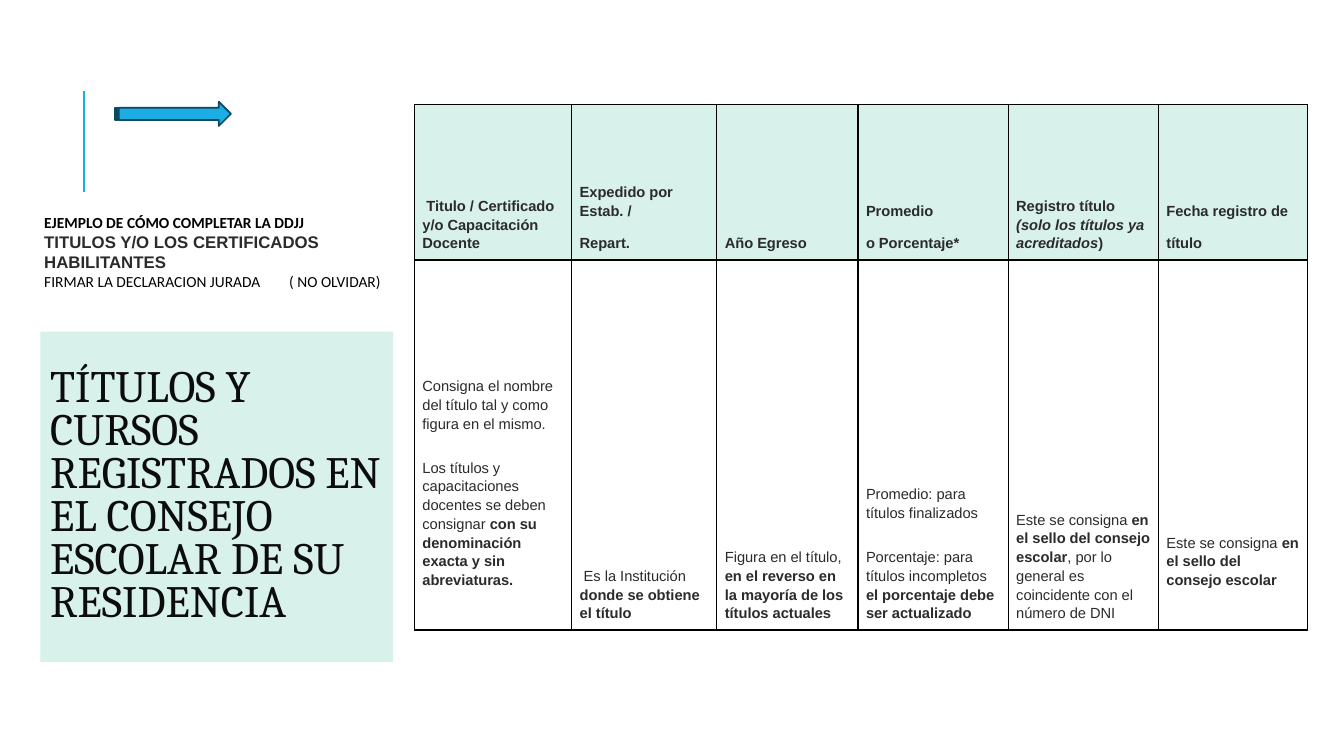
from dataclasses import dataclass
from typing import NamedTuple

from lxml import etree
from pptx import Presentation, util as u
from pptx.dml.color import RGBColor
from pptx.enum import shapes, text
from pptx.oxml import ns

MINT = "D8F1EA"
BLUE = "1CADE4"
NAVY = "0B4960"
BLACK = "000000"
GRAY = "2B2B2B"
INK = "0C0C0C"


class Run(NamedTuple):
    text: str
    bold: bool = False
    italic: bool = False


@dataclass
class Line:
    runs: list[Run]
    before: float = 10
    size: float = 10.5
    font: str = "Arial"
    color: str = GRAY


@dataclass
class Column:
    width: float
    header: list[Line]
    body: list[Line]
    bottom: float = 0.08


def plain(words: str, **style) -> Line:
    return Line([Run(words)], **style)


def bold(words: str, **style) -> Line:
    return Line([Run(words, True)], **style)


COLUMNS = [
    Column(1.56, [bold(" Titulo / Certificado y/o Capacitación Docente")],
           [plain("Consigna el nombre del título tal y como  figura en el mismo."),
            Line([Run("Los títulos y capacitaciones docentes se deben consignar "),
                  Run("con su denominación exacta y sin abreviaturas.", True)], before=18)],
           bottom=0.41),
    Column(1.44, [bold("Expedido por Estab. /"), bold("Repart.")],
           [Line([Run(" Es la Institución "), Run("donde se obtiene el título", True)])]),
    Column(1.4, [bold("Año Egreso")],
           [Line([Run("Figura en el título,"),
                  Run(" en el reverso en la mayoría de los títulos actuales", True)])]),
    Column(1.49, [bold("Promedio"), bold("o Porcentaje*")],
           [plain("Promedio: para títulos finalizados"),
            Line([Run("Porcentaje: para títulos incompletos "),
                  Run("el porcentaje debe ser actualizado", True)], before=18)]),
    Column(1.49, [Line([Run("Registro título ", True),
                        Run("(solo los títulos ya acreditados", True, True),
                        Run(")", True)])],
           [Line([Run("Este se consigna "),
                  Run("en el sello del consejo escolar", True),
                  Run(", por lo general es coincidente con el número de DNI")])]),
    Column(1.48, [bold("Fecha registro de"), bold("título")],
           [Line([Run("Este se consigna "), Run("en el sello del consejo escolar", True)])],
           bottom=0.41),
]
ROW_HEIGHTS = [1.54, 3.67]

CAPTION = [
    bold("EJEMPLO DE CÓMO COMPLETAR LA DDJJ", before=0, size=11, font="Calibri", color=BLACK),
    bold("TITULOS Y/O LOS CERTIFICADOS HABILITANTES", before=0, size=12),
    plain("FIRMAR LA DECLARACION JURADA\t( NO OLVIDAR)",
          before=0, size=11, font="Calibri", color=BLACK),
]
TITLE = "TÍTULOS Y CURSOS REGISTRADOS EN EL CONSEJO ESCOLAR DE SU RESIDENCIA"


def rgb(color: str) -> RGBColor:
    return RGBColor.from_string(color)


def inches(*lengths: float) -> list[u.Length]:
    return [u.Inches(length) for length in lengths]


def write_text(frame, lines: list[Line], *, spacing: float = 1.0) -> None:
    frame.word_wrap = True
    for index, line in enumerate(lines):
        paragraph = frame.add_paragraph() if index else frame.paragraphs[0]
        paragraph.alignment = text.PP_ALIGN.LEFT
        paragraph.line_spacing = spacing
        paragraph.space_before = u.Pt(line.before if index else 0)
        for part in line.runs:
            run = paragraph.add_run()
            run.text = part.text
            run.font.name = line.font
            run.font.size = u.Pt(line.size)
            run.font.bold = part.bold
            run.font.italic = part.italic
            run.font.color.rgb = rgb(line.color)


def add_tab_stop(paragraph, position: float) -> None:
    properties = paragraph._p.get_or_add_pPr()
    tabs = etree.SubElement(properties, ns.qn("a:tabLst"))
    etree.SubElement(tabs, ns.qn("a:tab"), pos=str(u.Inches(position)), algn="l")


def add_borders(cell, color: str, width: float) -> None:
    properties = cell._tc.get_or_add_tcPr()
    for side in ("a:lnL", "a:lnR", "a:lnT", "a:lnB"):
        border = etree.SubElement(properties, ns.qn(side), w=str(u.Pt(width)))
        fill = etree.SubElement(border, ns.qn("a:solidFill"))
        etree.SubElement(fill, ns.qn("a:srgbClr"), val=color)


def add_filled_shape(slide, kind, box: tuple, fill: str, line: str | None = None):
    shape = slide.shapes.add_shape(kind, *inches(*box))
    shape.shadow.inherit = False
    shape.fill.solid()
    shape.fill.fore_color.rgb = rgb(fill)
    if line:
        shape.line.color.rgb = rgb(line)
        shape.line.width = u.Pt(1.25)
    else:
        shape.line.fill.background()
    return shape


def add_accent_line(slide) -> None:
    connector = slide.shapes.add_connector(
        shapes.MSO_CONNECTOR.STRAIGHT, *inches(0.83, 1.9, 0.83, 0.9))
    connector.line.color.rgb = rgb(BLUE)
    connector.line.width = u.Pt(1.5)
    etree.SubElement(connector._element.spPr, ns.qn("a:effectLst"))


def fill_cell(cell, lines: list[Line], fill: str | None, bottom: float) -> None:
    add_borders(cell, BLACK, 1)
    if fill:
        cell.fill.solid()
        cell.fill.fore_color.rgb = rgb(fill)
    else:
        cell.fill.background()
    cell.vertical_anchor = text.MSO_ANCHOR.BOTTOM
    cell.margin_left = cell.margin_right = cell.margin_top = u.Inches(0.08)
    cell.margin_bottom = u.Inches(bottom)
    write_text(cell.text_frame, lines, spacing=1.15)


def add_titles_table(slide) -> None:
    width = sum(column.width for column in COLUMNS)
    frame = slide.shapes.add_table(
        len(ROW_HEIGHTS), len(COLUMNS), *inches(4.11, 1.04, width, sum(ROW_HEIGHTS)))
    table = frame.table
    table.first_row = table.horz_banding = False
    for row, height in zip(table.rows, ROW_HEIGHTS):
        row.height = u.Inches(height)
    for index, column in enumerate(COLUMNS):
        table.columns[index].width = u.Inches(column.width)
        fill_cell(table.cell(0, index), column.header, MINT, 0.08)
        fill_cell(table.cell(1, index), column.body, None, column.bottom)


def main() -> None:
    presentation = Presentation()
    presentation.slide_width, presentation.slide_height = inches(13.33, 7.5)
    slide = presentation.slides.add_slide(presentation.slide_layouts[6])

    add_accent_line(slide)
    title = add_filled_shape(
        slide, shapes.MSO_SHAPE.RECTANGLE, (0.4, 3.29, 3.5, 3.28), MINT)
    title.text_frame.vertical_anchor = text.MSO_ANCHOR.MIDDLE
    write_text(title.text_frame, [plain(TITLE, size=32, font="Cambria", color=INK)], spacing=0.8)
    add_titles_table(slide)

    caption = slide.shapes.add_textbox(*inches(0.34, 2.06, 3.65, 0.88)).text_frame
    caption.vertical_anchor = text.MSO_ANCHOR.MIDDLE
    write_text(caption, CAPTION)
    add_tab_stop(caption.paragraphs[-1], 2.43)

    add_filled_shape(slide, shapes.MSO_SHAPE.STRIPED_RIGHT_ARROW,
                     (1.14, 1.01, 1.15, 0.24), BLUE, NAVY)
    presentation.save("out.pptx")


if __name__ == "__main__":
    main()
